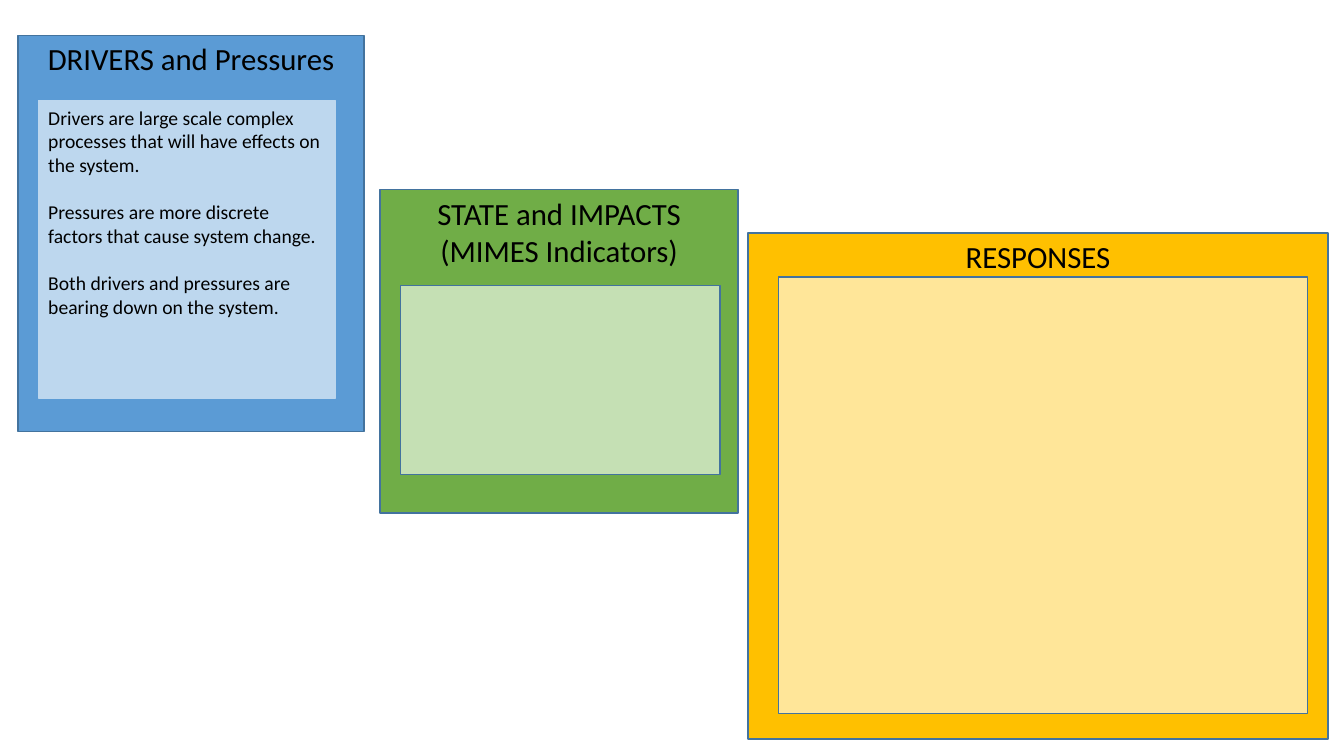
from dataclasses import dataclass

from pptx import Presentation
from pptx import util as u
from pptx.dml.color import RGBColor
from pptx.enum import shapes, text

PANELS = [
    {
        "title": ["DRIVERS and Pressures"],
        "frame": (0.18, 0.35, 3.43, 3.93),
        "inset": (0.38, 1.0, 2.95, 2.95),
        "colours": ("5B9BD5", "BDD7EE"),
        "inset_line": "BDD7EE",
        "body": [
            "Drivers are large scale complex processes that will have effects on the system.",
            "Pressures are more discrete factors that cause system change.",
            "Both drivers and pressures are bearing down on the system.",
        ],
    },
    {
        "title": ["STATE and IMPACTS", "(MIMES Indicators)"],
        "frame": (3.77, 1.88, 3.55, 3.21),
        "inset": (3.97, 2.83, 3.17, 1.88),
        "colours": ("70AD47", "C5E0B4"),
    },
    {
        "title": ["RESPONSES"],
        "frame": (7.42, 2.31, 5.75, 5.02),
        "inset": (7.72, 2.75, 5.25, 4.33),
        "colours": ("FFC000", "FFE699"),
    },
]


@dataclass(frozen=True)
class Theme:
    font: str = "Calibri"
    ink: str = "000000"
    outline: str = "43739E"
    title_size: int = 22
    body_size: int = 14
    body_gap: int = 17
    line_width: int = 1


THEME = Theme()


def add_box(parent, bounds, fill, line):
    box = parent.shapes.add_shape(
        shapes.MSO_SHAPE.RECTANGLE, *(u.Inches(length) for length in bounds)
    )
    box.shadow.inherit = False
    box.fill.solid()
    box.fill.fore_color.rgb = RGBColor.from_string(fill)
    box.line.color.rgb = RGBColor.from_string(line)
    box.line.width = u.Pt(THEME.line_width)
    return box


def write(box, lines, size, alignment, gap=0):
    frame = box.text_frame
    frame.word_wrap = True
    frame.vertical_anchor = text.MSO_ANCHOR.TOP
    for index, line in enumerate(lines):
        paragraph = frame.paragraphs[0] if index == 0 else frame.add_paragraph()
        paragraph.text = line
        paragraph.alignment = alignment
        paragraph.space_after = u.Pt(gap)
        paragraph.font.name = THEME.font
        paragraph.font.size = u.Pt(size)
        paragraph.font.color.rgb = RGBColor.from_string(THEME.ink)


def add_panel(slide, panel):
    group = slide.shapes.add_group_shape()
    frame_fill, inset_fill = panel["colours"]
    frame = add_box(group, panel["frame"], frame_fill, THEME.outline)
    write(frame, panel["title"], THEME.title_size, text.PP_ALIGN.CENTER)
    inset_line = panel.get("inset_line", THEME.outline)
    inset = add_box(group, panel["inset"], inset_fill, inset_line)
    if "body" in panel:
        write(inset, panel["body"], THEME.body_size, text.PP_ALIGN.LEFT, THEME.body_gap)


def main():
    presentation = Presentation()
    presentation.slide_width = u.Inches(13.33)
    presentation.slide_height = u.Inches(7.5)
    slide = presentation.slides.add_slide(presentation.slide_layouts[6])
    for panel in PANELS:
        add_panel(slide, panel)
    presentation.save("out.pptx")


if __name__ == "__main__":
    main()
